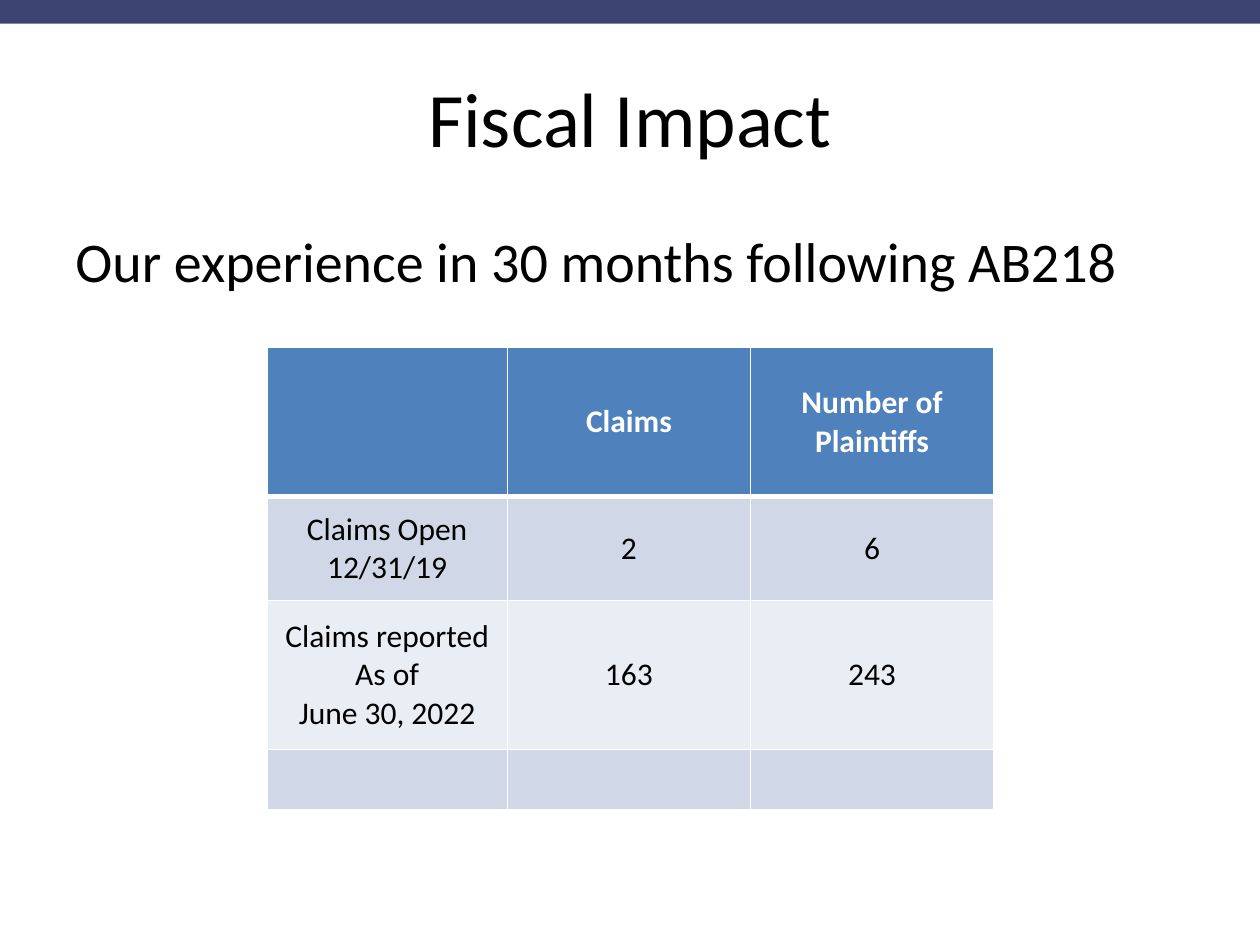
from lxml.etree import SubElement
from pptx import Presentation
from pptx.dml.color import RGBColor
from pptx.enum.shapes import MSO_SHAPE as Shape
from pptx.enum.text import MSO_ANCHOR as Anchor, PP_ALIGN as Align
from pptx.oxml.ns import qn
from pptx.util import Cm, Pt

FONT = "Calibri"
BLACK, WHITE = "000000", "FFFFFF"
BAR_COLOR, HEADER_COLOR = "3C4472", "4F81BD"
BAND_COLORS = ("D0D8E8", "E9EDF4")

CLAIMS = [
    ("", "Claims", "Number of Plaintiffs"),
    ("Claims Open 12/31/19", "2", "6"),
    ("Claims reported\nAs of\nJune 30, 2022", "163", "243"),
    ("", "", ""),
]
COLUMN_WIDTHS = (4.85, 4.9, 4.9)
ROW_HEIGHTS = (3.0, 2.1, 3.0, 1.22)


def paint(color_format, color):
    color_format.rgb = RGBColor.from_string(color)


def fill_solid(target, color):
    target.fill.solid()
    paint(target.fill.fore_color, color)


def format_text(frame, size, color=BLACK, align=Align.LEFT, bold=False):
    for paragraph in frame.paragraphs:
        paragraph.alignment = align
        font = paragraph.font
        font.name, font.size, font.bold = FONT, Pt(size), bold
        paint(font.color, color)
        for run in paragraph.runs:
            run.font.name, run.font.size, run.font.bold = FONT, Pt(size), bold
            paint(run.font.color, color)


def set_borders(cell, top=1, bottom=1):
    """Draw white cell borders, widths in points; call before filling the cell."""
    properties = cell._tc.get_or_add_tcPr()
    for side, width in (("L", 1), ("R", 1), ("T", top), ("B", bottom)):
        line = SubElement(properties, qn(f"a:ln{side}"), w=str(Pt(width)))
        solid = SubElement(line, qn("a:solidFill"))
        SubElement(solid, qn("a:srgbClr"), val=WHITE)


def add_top_bar(slide, left, top, width, height):
    bar = slide.shapes.add_shape(Shape.RECTANGLE, left, top, width, height)
    bar.shadow.inherit = False
    fill_solid(bar, BAR_COLOR)
    bar.line.fill.background()


def place_title(slide, left, top, width, height):
    title = slide.shapes.title
    title.left, title.top, title.width, title.height = left, top, width, height
    title.text_frame.text = "Fiscal Impact"
    title.text_frame.vertical_anchor = Anchor.MIDDLE
    format_text(title.text_frame, 44, align=Align.CENTER)


def add_lead(slide, left, top, width, height):
    lead = slide.shapes.add_textbox(left, top, width, height).text_frame
    lead.word_wrap = True
    lead.text = "Our experience in 30 months following AB218"
    format_text(lead, 32)


def add_claims_table(slide, left, top):
    width, height = Cm(sum(COLUMN_WIDTHS)), Cm(sum(ROW_HEIGHTS))
    table = slide.shapes.add_table(
        len(CLAIMS), len(COLUMN_WIDTHS), left, top, width, height
    ).table
    for column, column_width in zip(table.columns, COLUMN_WIDTHS):
        column.width = Cm(column_width)
    for index, (row, row_height, texts) in enumerate(
        zip(table.rows, ROW_HEIGHTS, CLAIMS)
    ):
        row.height = Cm(row_height)
        header = index == 0
        fill_color = HEADER_COLOR if header else BAND_COLORS[(index - 1) % 2]
        for cell, text in zip(row.cells, texts):
            set_borders(cell, top=3 if index == 1 else 1, bottom=3 if header else 1)
            fill_solid(cell, fill_color)
            cell.vertical_anchor = Anchor.MIDDLE
            cell.text_frame.text = text
            format_text(
                cell.text_frame, 18, WHITE if header else BLACK, Align.CENTER, header
            )


def main():
    presentation = Presentation()
    presentation.slide_width, presentation.slide_height = Cm(25.4), Cm(19.05)
    slide = presentation.slides.add_slide(presentation.slide_layouts[5])
    margin, content_width = Cm(1.27), Cm(22.86)
    add_top_bar(slide, 0, 0, presentation.slide_width, Cm(0.48))
    place_title(slide, margin, Cm(0.76), content_width, Cm(3.18))
    add_lead(slide, margin, Cm(4.45), content_width, Cm(1.8))
    add_claims_table(slide, Cm(5.38), Cm(7.01))
    presentation.save("out.pptx")


if __name__ == "__main__":
    main()
